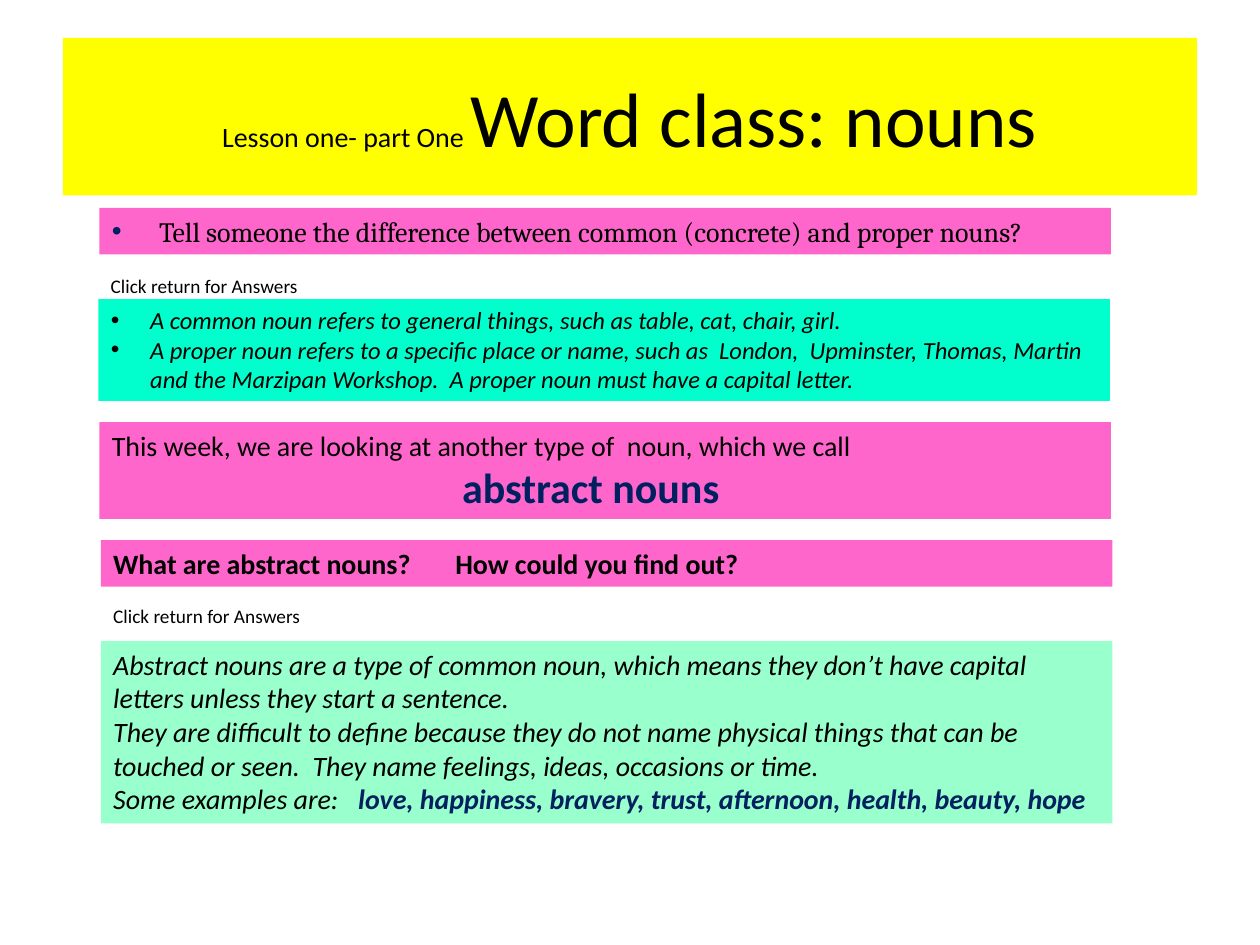
"""Build the lesson slide about common, proper and abstract nouns."""
from lxml.etree import SubElement
from pptx import Presentation
from pptx.dml.color import RGBColor
from pptx.enum.shapes import MSO_SHAPE as Shape
from pptx.enum.text import MSO_ANCHOR as Anchor, PP_ALIGN as Align
from pptx.oxml.ns import qn
from pptx.util import Pt

COLORS = {"yellow": "FFFF00", "pink": "FF66CC", "turquoise": "00FFCC",
          "mint": "99FFCC", "black": "000000", "navy": "002060"}
PANEL_WIDTH = 578
ITALIC = {"italic": True}
KEY_TERM = {"color": "navy", "bold": True}


def paragraph_of(*runs, **layout):
    return {"runs": runs, **layout}


def panel(left, top, height, fill, size, *paragraphs, width=PANEL_WIDTH, anchor=Anchor.TOP):
    return {"box": (left, top, width, height), "fill": fill, "size": size,
            "paragraphs": paragraphs, "anchor": anchor}


def prompt(left, top):
    return panel(left, top, 20.6, None, 11,
                 paragraph_of(("Click return for Answers", {})), width=122)


PANELS = [
    panel(36, 21.6, 90, "yellow", 44,
          paragraph_of(("Lesson one- part One ", {"size": 16}), ("Word class: nouns", {}),
                       align=Align.CENTER),
          width=648, anchor=Anchor.MIDDLE),
    panel(56.8, 118.8, 26.6, "pink", 16,
          paragraph_of(("Tell someone the difference between common (concrete) "
                        "and proper nouns?", {"font": "Cambria"}),
                       indent=27, bullet="navy")),
    panel(56.8, 241.2, 55.4, "pink", 16,
          paragraph_of(("This week, we are looking at another type of  noun, "
                        "which we call", {})),
          paragraph_of(("abstract nouns", {"size": 24, **KEY_TERM}),
                       align=Align.CENTER, right=16.5)),
    panel(56.2, 170.9, 58.2, "turquoise", 14,
          paragraph_of(("A common noun refers to general things, such as table, cat, "
                        "chair, girl.", ITALIC), indent=22.5, bullet="black"),
          paragraph_of(("A proper noun refers to a specific place or name, such as  London,  "
                        "Upminster, Thomas, Martin and the Marzipan Workshop.  A proper "
                        "noun must have a capital letter.", ITALIC),
                       indent=22.5, bullet="black")),
    prompt(56.2, 153.4),
    panel(57.6, 308.7, 26.6, "pink", 16,
          paragraph_of(("What are abstract nouns?\t", {"bold": True}),
                       ("How could you find out?", {"bold": True}), tab=195.5)),
    panel(57.6, 366.4, 104.2, "mint", 16,
          paragraph_of(("Abstract nouns are a type of common noun, which means they "
                        "don’t have capital letters unless they start a sentence.", ITALIC)),
          paragraph_of(("They are difficult to define because they do not name physical "
                        "things that can be touched or seen.  They name feelings, ideas, "
                        "occasions or time.", ITALIC)),
          paragraph_of(("Some examples are:\t", ITALIC),
                       ("love, happiness, bravery, trust, afternoon, health, beauty, hope",
                        {**ITALIC, **KEY_TERM}), tab=140)),
    prompt(57.6, 342),
]


def rgb(name):
    return RGBColor.from_string(COLORS[name])


def format_paragraph(paragraph, layout):
    paragraph.alignment = layout.get("align", Align.LEFT)
    properties = paragraph._p.get_or_add_pPr()
    if "right" in layout:
        properties.set("marR", str(Pt(layout["right"])))
    if "bullet" in layout:
        properties.set("marL", str(Pt(layout["indent"])))
        properties.set("indent", str(-Pt(layout["indent"])))
        color = SubElement(properties, qn("a:buClr"))
        SubElement(color, qn("a:srgbClr"), val=COLORS[layout["bullet"]])
        SubElement(properties, qn("a:buFont"), typeface="Arial")
        SubElement(properties, qn("a:buChar"), char="•")
    if "tab" in layout:
        tabs = SubElement(properties, qn("a:tabLst"))
        SubElement(tabs, qn("a:tab"), pos=str(Pt(layout["tab"])), algn="l")


def add_run(paragraph, text, style, size):
    run = paragraph.add_run()
    run.text = text
    font = run.font
    font.name = style.get("font", "Calibri")
    font.size = Pt(style.get("size", size))
    font.bold = style.get("bold", False)
    font.italic = style.get("italic", False)
    font.color.rgb = rgb(style.get("color", "black"))


def add_panel(slide, content):
    box = [Pt(length) for length in content["box"]]
    if content["fill"]:
        shape = slide.shapes.add_shape(Shape.RECTANGLE, *box)
        shape.shadow.inherit = False
        shape.fill.solid()
        shape.fill.fore_color.rgb = rgb(content["fill"])
        shape.line.fill.background()
    else:
        shape = slide.shapes.add_textbox(*box)
    frame = shape.text_frame
    frame.word_wrap = True
    frame.vertical_anchor = content["anchor"]
    for index, layout in enumerate(content["paragraphs"]):
        paragraph = frame.add_paragraph() if index else frame.paragraphs[0]
        format_paragraph(paragraph, layout)
        for text, style in layout["runs"]:
            add_run(paragraph, text, style, content["size"])


def main():
    presentation = Presentation()
    presentation.slide_width, presentation.slide_height = Pt(720), Pt(540)
    slide = presentation.slides.add_slide(presentation.slide_layouts[6])
    for content in PANELS:
        add_panel(slide, content)
    presentation.save("out.pptx")


if __name__ == "__main__":
    main()
